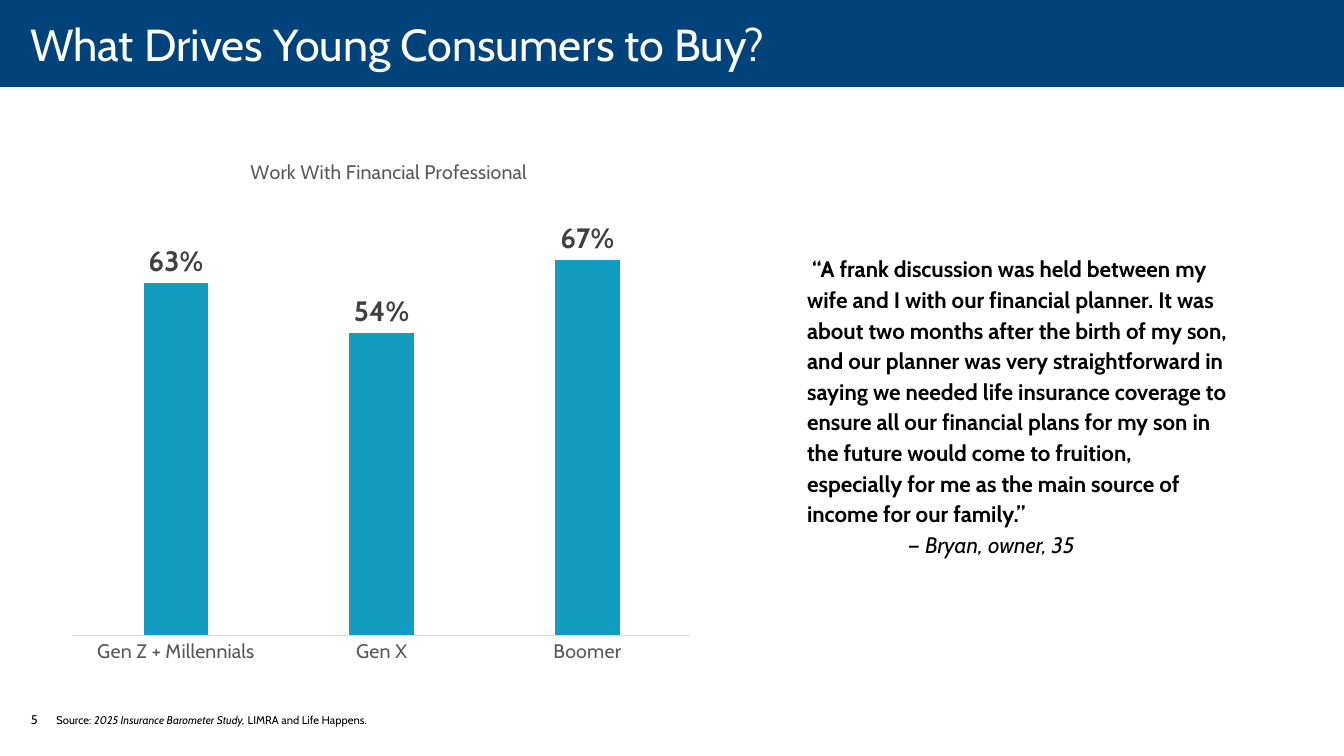
from dataclasses import dataclass

from lxml import etree
from pptx import Presentation
from pptx.chart.data import CategoryChartData
from pptx.dml.color import RGBColor
from pptx.enum.chart import XL_CHART_TYPE as ChartType, XL_LABEL_POSITION as LabelPos
from pptx.enum.chart import XL_TICK_MARK as TickMark
from pptx.enum.shapes import MSO_SHAPE as Shape
from pptx.enum.text import MSO_ANCHOR as Anchor
from pptx.oxml.ns import qn
from pptx.util import Cm, Pt


@dataclass(frozen=True)
class Theme:
    font: str = "Cabin"
    band: str = "00437B"
    bar: str = "129DC0"
    white: str = "FFFFFF"
    black: str = "000000"
    chart_text: str = "595959"
    value_text: str = "404040"
    axis: str = "D9D9D9"
    title: int = 32
    value: int = 20
    quote: int = 16
    chart: int = 14
    page: int = 9
    source: int = 8


THEME = Theme()


def style(font, size, color, bold=False, italic=False):
    font.name = THEME.font
    font.size = Pt(size)
    font.bold = bold
    font.italic = italic
    font.color.rgb = RGBColor.from_string(color)


def add_text_box(slide, box, anchor=Anchor.TOP):
    tf = slide.shapes.add_textbox(*map(Cm, box)).text_frame
    tf.word_wrap = True
    tf.vertical_anchor = anchor
    return tf


def add_run(p, text, size, color=THEME.black, bold=False, italic=False):
    r = p.add_run()
    r.text = text
    style(r.font, size, color, bold, italic)


def set_layout(parent, before, **fractions):
    """Place a chart part by fractions of the chart area."""
    for old in parent.findall(qn("c:layout")):
        parent.remove(old)
    layout = etree.Element(qn("c:layout"))
    manual = etree.SubElement(layout, qn("c:manualLayout"))
    if "w" in fractions:
        etree.SubElement(manual, qn("c:layoutTarget")).set("val", "inner")
    for key in ("x", "y"):
        etree.SubElement(manual, qn(f"c:{key}Mode")).set("val", "edge")
    for key, value in fractions.items():
        etree.SubElement(manual, qn(f"c:{key}")).set("val", str(value))
    parent.find(qn(before)).addprevious(layout)


# Title band across the top
def add_header(slide, box, text):
    sp = slide.shapes.add_shape(Shape.RECTANGLE, *map(Cm, box))
    sp.shadow.inherit = False
    sp.fill.solid()
    sp.fill.fore_color.rgb = RGBColor.from_string(THEME.band)
    sp.line.fill.background()

    tf = add_text_box(slide, box, Anchor.MIDDLE)
    tf.margin_left, tf.margin_right = Cm(0.76), Cm(0.5)
    tf.margin_top = tf.margin_bottom = 0
    add_run(tf.paragraphs[0], text, THEME.title, THEME.white)


# Column chart of the generations
def add_generation_chart(slide, box, title, shares):
    data = CategoryChartData(number_format="0%")
    data.categories = list(shares)
    data.add_series("Series 1", list(shares.values()))
    chart = slide.shapes.add_chart(
        ChartType.COLUMN_CLUSTERED, *map(Cm, box), data).chart
    style(chart.font, THEME.chart, THEME.chart_text)
    chart.has_legend = False

    chart.has_title = True
    add_run(chart.chart_title.text_frame.paragraphs[0], title,
            THEME.chart, THEME.chart_text)
    chart.chart_title.include_in_layout = False
    set_layout(chart.chart_title._element, "c:overlay", x=0.29, y=0.06)

    cat_axis = chart.category_axis
    cat_axis.major_tick_mark = TickMark.NONE
    cat_axis.format.line.color.rgb = RGBColor.from_string(THEME.axis)
    cat_axis.format.line.width = Pt(0.75)
    style(cat_axis.tick_labels.font, THEME.chart, THEME.chart_text)

    val_axis = chart.value_axis
    val_axis.minimum_scale, val_axis.maximum_scale = 0, 0.8
    val_axis.has_major_gridlines = False
    val_axis.visible = False

    plot = chart.plots[0]
    plot.gap_width, plot.overlap = 219, -27
    plot.vary_by_categories = False
    set_layout(plot._element.getparent(), "c:barChart",
               x=0.02, y=0.12, w=0.96, h=0.81)

    series = plot.series[0]
    series.format.fill.solid()
    series.format.fill.fore_color.rgb = RGBColor.from_string(THEME.bar)
    labels = series.data_labels
    labels.show_value = True
    labels.position = LabelPos.OUTSIDE_END
    labels.number_format = "0%"
    labels.number_format_is_linked = False
    style(labels.font, THEME.value, THEME.value_text, bold=True)


# Customer quote with its speaker
def add_quote(slide, box, quote, speaker):
    tf = add_text_box(slide, box)
    p = tf.paragraphs[0]
    p._p.get_or_add_pPr().set("indent", str(Cm(0.13)))
    add_run(p, quote, THEME.quote, bold=True)
    by = tf.add_paragraph()
    by._p.get_or_add_pPr().set("marL", str(Cm(2.54)))
    add_run(by, speaker, THEME.quote, italic=True)
    for p in tf.paragraphs:
        p.line_spacing = 1.14


# Page number and source line
def add_footer(slide, page_box, source_box, page, source):
    add_run(add_text_box(slide, page_box).paragraphs[0], page, THEME.page)
    p = add_text_box(slide, source_box, Anchor.BOTTOM).paragraphs[0]
    for text, italic in source:
        add_run(p, text, THEME.source, italic=italic)


def main():
    prs = Presentation()
    prs.slide_width, prs.slide_height = Cm(33.87), Cm(19.05)
    slide = prs.slides.add_slide(prs.slide_layouts[6])

    add_header(slide, (0, 0, 33.87, 2.19), "What Drives Young Consumers to Buy?")
    add_generation_chart(
        slide, (1.52, 3.05, 16.2, 13.94), "Work With Financial Professional",
        {"Gen Z + Millennials": 0.63, "Gen X": 0.54, "Boomer": 0.67})
    add_quote(
        slide, (20.09, 6.22, 11.13, 8.03),
        "“A frank discussion was held between my wife and I with our financial "
        "planner. It was about two months after the birth of my son, and our "
        "planner was very straightforward in saying we needed life insurance "
        "coverage to ensure all our financial plans for my son in the future "
        "would come to fruition, especially for me as the main source of income "
        "for our family.”",
        "— Bryan, owner, 35")
    add_footer(
        slide, (0.53, 17.81, 1.24, 1.02), (1.17, 16.61, 14.86, 1.83), "5",
        [("Source: ", False), ("2025 Insurance Barometer Study, ", True),
         ("LIMRA and Life Happens.", False)])
    prs.save("out.pptx")


if __name__ == "__main__":
    main()
